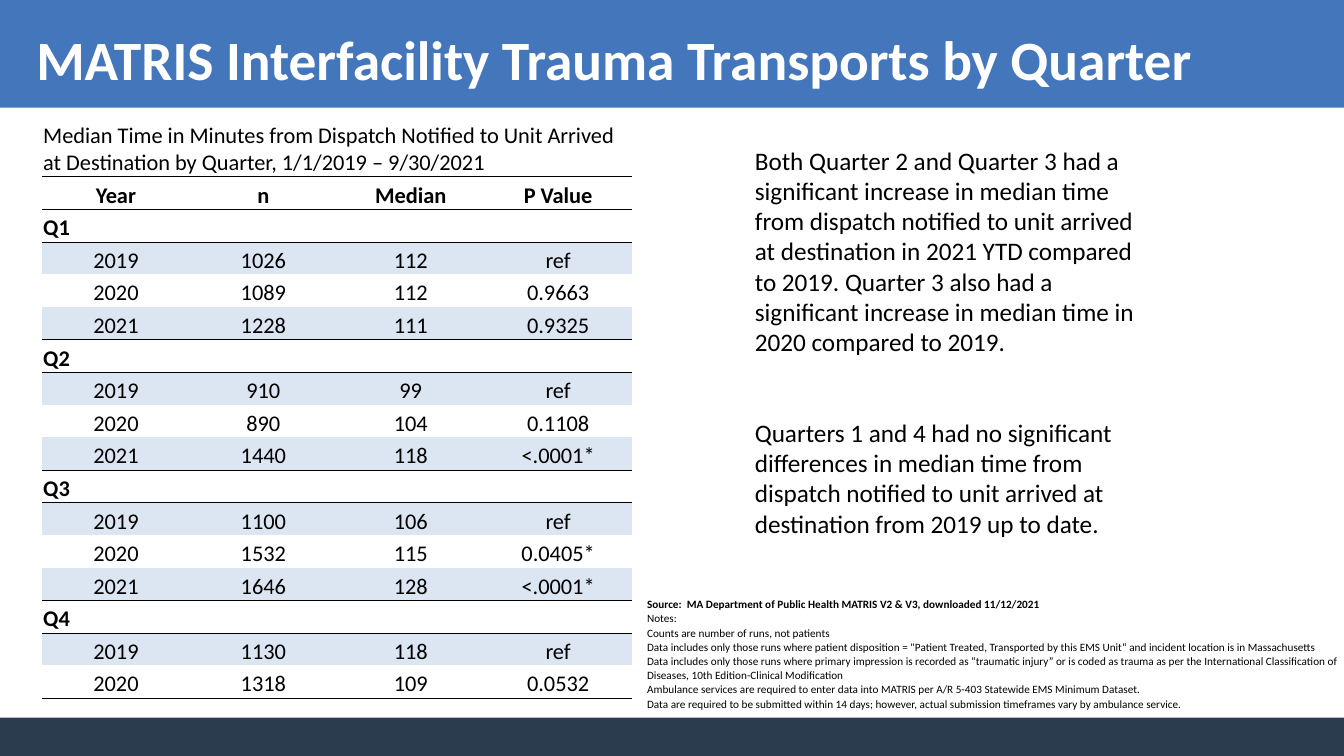
from dataclasses import dataclass
from lxml.etree import SubElement
from pptx import Presentation
from pptx.dml.color import RGBColor
from pptx.enum.shapes import MSO_SHAPE
from pptx.enum.text import MSO_ANCHOR, MSO_AUTO_SIZE, PP_ALIGN
from pptx.oxml import parse_xml
from pptx.oxml.ns import nsdecls, qn
from pptx.slide import Slide
from pptx.table import Table, _Cell
from pptx.text.text import _Paragraph
from pptx.util import Pt

BLUE = RGBColor(0x43, 0x76, 0xBB)
NAVY = RGBColor(0x2A, 0x3C, 0x4E)
TINT = RGBColor(0xDC, 0xE6, 0xF2)
BLACK = RGBColor(0, 0, 0)
WHITE = RGBColor(255, 255, 255)
FONT = "Calibri"
PLAIN = "{2D5ABB26-0587-4C30-8999-92F81FD0307C}"
WIDE, HIGH = 960, 540


@dataclass
class Bar:
    top: float
    height: float
    color: RGBColor


@dataclass
class Row:
    cells: tuple[str, ...]
    bold: bool = False
    center: bool = False
    tint: bool = False
    top: bool = False
    bottom: bool = False
    merge: bool = False


BARS = (Bar(0, 76.9, BLUE), Bar(512.6, 27.4, NAVY))
CAPTION = (
    "Median Time in Minutes from Dispatch Notified to Unit Arrived "
    "at Destination by Quarter, 1/1/2019 – 9/30/2021"
)
HEAD = ("Year", "n", "Median", "P Value")
QUARTERS = {
    "Q1": (("2019", "1026", "112", "ref"),
           ("2020", "1089", "112", "0.9663"),
           ("2021", "1228", "111", "0.9325")),
    "Q2": (("2019", "910", "99", "ref"),
           ("2020", "890", "104", "0.1108"),
           ("2021", "1440", "118", "<.0001*")),
    "Q3": (("2019", "1100", "106", "ref"),
           ("2020", "1532", "115", "0.0405*"),
           ("2021", "1646", "128", "<.0001*")),
    "Q4": (("2019", "1130", "118", "ref"),
           ("2020", "1318", "109", "0.0532")),
}
FINDINGS = (
    "Both Quarter 2 and Quarter 3 had a significant increase in median time "
    "from dispatch notified to unit arrived at destination in 2021 YTD compared "
    "to 2019. Quarter 3 also had a significant increase in median time in 2020 "
    "compared to 2019.",
    "Quarters 1 and 4 had no significant differences in median time from "
    "dispatch notified to unit arrived at destination from 2019 up to date.",
)
NOTES = (
    Row(("Source:  MA Department of Public Health MATRIS V2 & V3, "
         "downloaded 11/12/2021",), bold=True, merge=True),
    Row(("Notes:", "")),
    Row(("Counts are number of runs, not patients", "")),
    Row(("Data includes only those runs where patient disposition = \"Patient "
         "Treated, Transported by this EMS Unit“ and incident location is in "
         "Massachusetts",), merge=True),
    Row(("Data includes only those runs where primary impression is recorded as "
         "“traumatic injury” or is coded as trauma as per the International "
         "Classification of Diseases, 10th Edition-Clinical Modification",),
        merge=True),
    Row(("Ambulance services are required to enter data into MATRIS per A/R "
         "5-403 Statewide EMS Minimum Dataset.",), merge=True),
    Row(("Data are required to be submitted within 14 days; however, actual "
         "submission timeframes vary by ambulance service.",), merge=True),
)


def add_text(para: _Paragraph, text: str, size: float,
             color: RGBColor = BLACK, bold: bool = False) -> None:
    run = para.add_run()
    run.text = text
    run.font.name = FONT
    run.font.size = Pt(size)
    run.font.bold = bold
    run.font.color.rgb = color


def draw_bar(slide: Slide, bar: Bar) -> None:
    shape = slide.shapes.add_shape(
        MSO_SHAPE.RECTANGLE, 0, Pt(bar.top), Pt(WIDE), Pt(bar.height))
    shape.shadow.inherit = False
    shape.fill.solid()
    shape.fill.fore_color.rgb = bar.color
    shape.line.fill.background()
    slide.shapes._spTree.insert(2, shape._element)


def draw_title(slide: Slide, text: str) -> None:
    title = slide.shapes.title
    title.left, title.top = Pt(18.7), Pt(7.2)
    title.width, title.height = Pt(864), Pt(69.1)
    frame = title.text_frame
    frame.auto_size = MSO_AUTO_SIZE.NONE
    frame.word_wrap = True
    frame.vertical_anchor = MSO_ANCHOR.MIDDLE
    para = frame.paragraphs[0]
    para.alignment = PP_ALIGN.LEFT
    add_text(para, text, 39.6, WHITE, True)


def set_edge(cell: _Cell, tag: str, spot: int) -> None:
    edge = parse_xml(
        f'<a:{tag} {nsdecls("a")} w="{Pt(0.5)}"><a:solidFill>'
        f'<a:srgbClr val="{BLACK}"/></a:solidFill></a:{tag}>')
    cell._tc.get_or_add_tcPr().insert(spot, edge)


def style_cell(cell: _Cell, row: Row) -> None:
    cell.vertical_anchor = MSO_ANCHOR.BOTTOM
    cell.margin_left = cell.margin_right = cell.margin_top = Pt(0.7)
    cell.margin_bottom = 0
    if row.tint:
        cell.fill.solid()
        cell.fill.fore_color.rgb = TINT
    else:
        cell.fill.background()
    if row.top:
        set_edge(cell, "lnT", 0)
    if row.bottom:
        set_edge(cell, "lnB", int(row.top))


def fill_row(table: Table, spot: int, row: Row, size: float) -> None:
    cells = list(table.rows[spot].cells)
    for cell in cells:
        style_cell(cell, row)
    if row.merge:
        cells[0].merge(cells[-1])
    for cell, text in zip(cells, row.cells):
        para = cell.text_frame.paragraphs[0]
        para.alignment = PP_ALIGN.CENTER if row.center else PP_ALIGN.LEFT
        if text:
            add_text(para, text, size, bold=row.bold)
        else:
            SubElement(para._p, qn("a:endParaRPr"), sz=str(int(size * 100)))


def draw_table(slide: Slide, left: float, top: float, cols: tuple[float, ...],
               heights: list[float], rows: list[Row], size: float) -> None:
    frame = slide.shapes.add_table(
        len(rows), len(cols), Pt(left), Pt(top), Pt(sum(cols)), Pt(sum(heights)))
    table = frame.table
    table.first_row = table.horz_banding = False
    table._tbl.tblPr.find(qn("a:tableStyleId")).text = PLAIN
    for col, width in zip(table.columns, cols):
        col.width = Pt(width)
    for spot, (row, height) in enumerate(zip(rows, heights)):
        table.rows[spot].height = Pt(height)
        fill_row(table, spot, row, size)


def list_times() -> list[Row]:
    rows = [Row((CAPTION,), merge=True, bottom=True),
            Row(HEAD, bold=True, center=True, top=True, bottom=True)]
    for name, years in QUARTERS.items():
        rows.append(Row((name,), bold=True, merge=True, top=True))
        for spot, year in enumerate(years):
            rows.append(Row(year, center=True, tint=spot % 2 == 0,
                            bottom=spot == len(years) - 1))
    return rows


def draw_findings(slide: Slide) -> None:
    box = slide.shapes.add_textbox(Pt(532.1), Pt(100.1), Pt(286.6), Pt(312.5))
    frame = box.text_frame
    frame.word_wrap = True
    for spot, text in enumerate(FINDINGS):
        para = frame.add_paragraph() if spot else frame.paragraphs[0]
        if spot:
            para.space_before = Pt(43.2)
        add_text(para, text, 18)


def main() -> None:
    deck = Presentation()
    deck.slide_width, deck.slide_height = Pt(WIDE), Pt(HIGH)
    slide = deck.slides.add_slide(deck.slide_layouts[5])
    for bar in BARS:
        draw_bar(slide, bar)
    draw_title(slide, "MATRIS Interfacility Trauma Transports by Quarter")
    times = list_times()
    draw_table(slide, 30.2, 83, (105.3,) * 4,
               [43.2] + [23.3] * (len(times) - 1), times, 16)
    draw_findings(slide)
    draw_table(slide, 461.5, 426.2, (438.5, 59.8),
               [10.2] * len(NOTES), list(NOTES), 8)
    deck.save("out.pptx")


if __name__ == "__main__":
    main()
